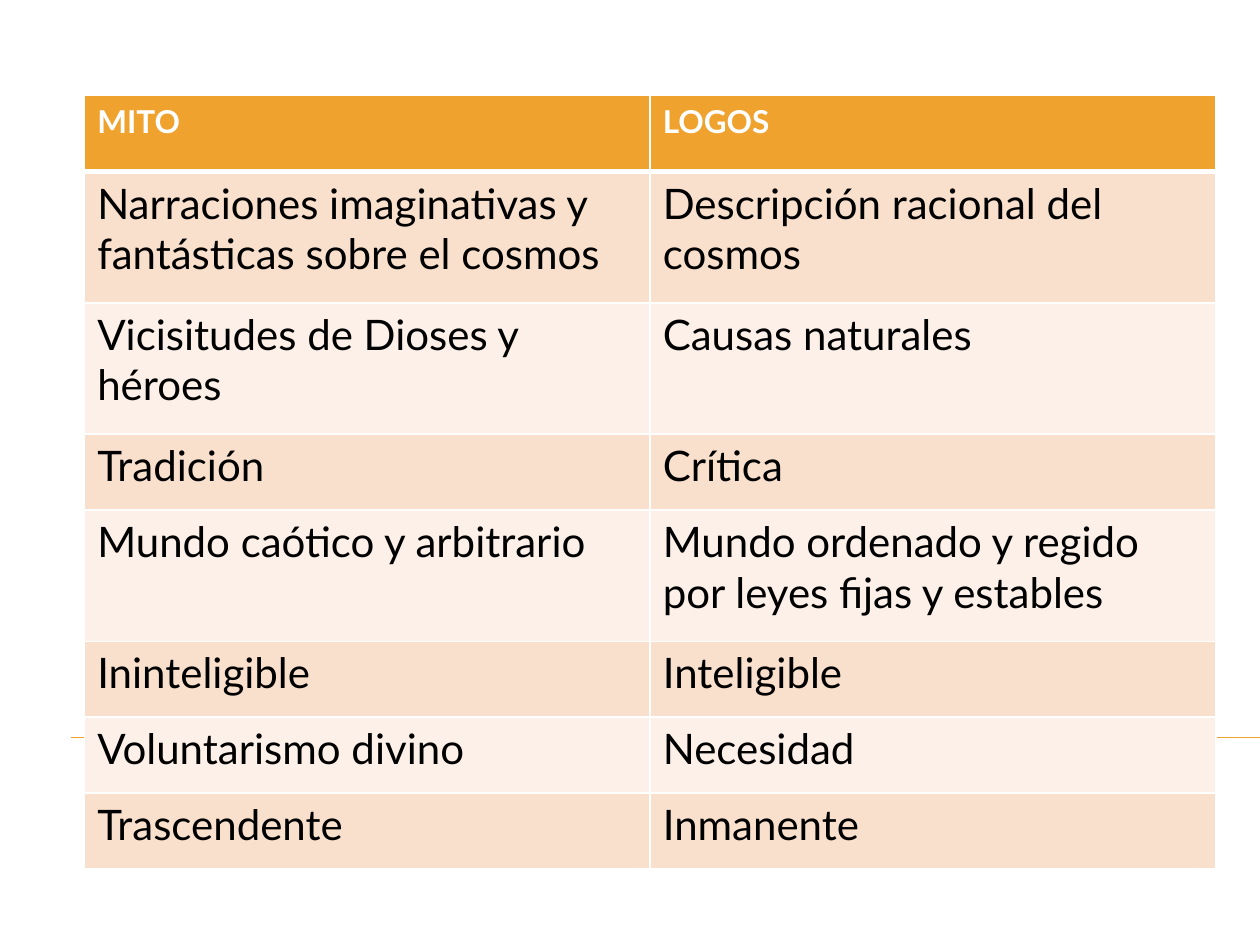
import dataclasses

import pptx
import pptx.dml.color
import pptx.enum.shapes
import pptx.oxml
import pptx.oxml.ns
import pptx.util

Pt = pptx.util.Pt


@dataclasses.dataclass(frozen=True)
class Theme:
    font: str = "Lato"
    accent: str = "F0A22E"
    bands: tuple = ("F9E0CD", "FCF0E8")
    light: str = "FFFFFF"
    dark: str = "000000"
    header_size: int = 18
    body_size: int = 24
    rule_width: float = 0.75
    grid_width: int = 1
    header_rule_width: int = 3


def rgb(value):
    return pptx.dml.color.RGBColor.from_string(value)


class SlideBuilder:
    def __init__(self, slide, theme):
        self.slide = slide
        self.theme = theme

    def rule(self, left, right, y):
        line = self.slide.shapes.add_connector(
            pptx.enum.shapes.MSO_CONNECTOR.STRAIGHT, Pt(left), Pt(y), Pt(right), Pt(y)
        )
        line.line.color.rgb = rgb(self.theme.accent)
        line.line.width = Pt(self.theme.rule_width)
        pptx.oxml.ns.qn("a:effectLst")
        line._element.spPr.append(
            pptx.oxml.parse_xml(f"<a:effectLst {pptx.oxml.ns.nsdecls('a')}/>")
        )

    def border(self, cell, side, width):
        cell._tc.get_or_add_tcPr().append(pptx.oxml.parse_xml(
            f'<a:ln{side} {pptx.oxml.ns.nsdecls("a")} w="{Pt(width)}">'
            f'<a:solidFill><a:srgbClr val="{self.theme.light}"/></a:solidFill>'
            f"</a:ln{side}>"
        ))

    def cell(self, cell, text, row):
        theme = self.theme
        is_header = row == 0
        heavy_side = {0: "B", 1: "T"}.get(row)
        for side in "LRTB":
            width = theme.header_rule_width if side == heavy_side else theme.grid_width
            self.border(cell, side, width)
        cell.fill.solid()
        cell.fill.fore_color.rgb = rgb(
            theme.accent if is_header else theme.bands[(row - 1) % 2]
        )
        cell.text = text
        font = cell.text_frame.paragraphs[0].font
        font.name = theme.font
        font.bold = is_header
        font.size = Pt(theme.header_size if is_header else theme.body_size)
        font.color.rgb = rgb(theme.light if is_header else theme.dark)

    def table(self, rows, heights, left, top, width):
        table = self.slide.shapes.add_table(
            len(rows), len(rows[0]), Pt(left), Pt(top), Pt(width), Pt(sum(heights))
        ).table
        for row, (texts, height) in enumerate(zip(rows, heights)):
            table.rows[row].height = Pt(height)
            for column, text in enumerate(texts):
                self.cell(table.cell(row, column), text, row)


def main():
    presentation = pptx.Presentation()
    presentation.slide_width = Pt(720)
    presentation.slide_height = Pt(540)
    blank_layout = presentation.slide_layouts[6]
    builder = SlideBuilder(presentation.slides.add_slide(blank_layout), Theme())

    single, double = 43.4, 75
    contrasts = [
        ("MITO", "LOGOS"),
        ("Narraciones imaginativas y fantásticas sobre el cosmos",
         "Descripción racional del cosmos"),
        ("Vicisitudes de Dioses y héroes", "Causas naturales"),
        ("Tradición", "Crítica"),
        ("Mundo caótico y arbitrario",
         "Mundo ordenado y regido por leyes fijas y estables"),
        ("Ininteligible", "Inteligible"),
        ("Voluntarismo divino", "Necesidad"),
        ("Trascendente", "Inmanente"),
    ]
    heights = [single, double, double, single, double, single, single, single]

    builder.rule(40.5, 720, 421.3)
    builder.table(contrasts, heights, left=48.4, top=54.7, width=646.4)
    presentation.save("out.pptx")


if __name__ == "__main__":
    main()
